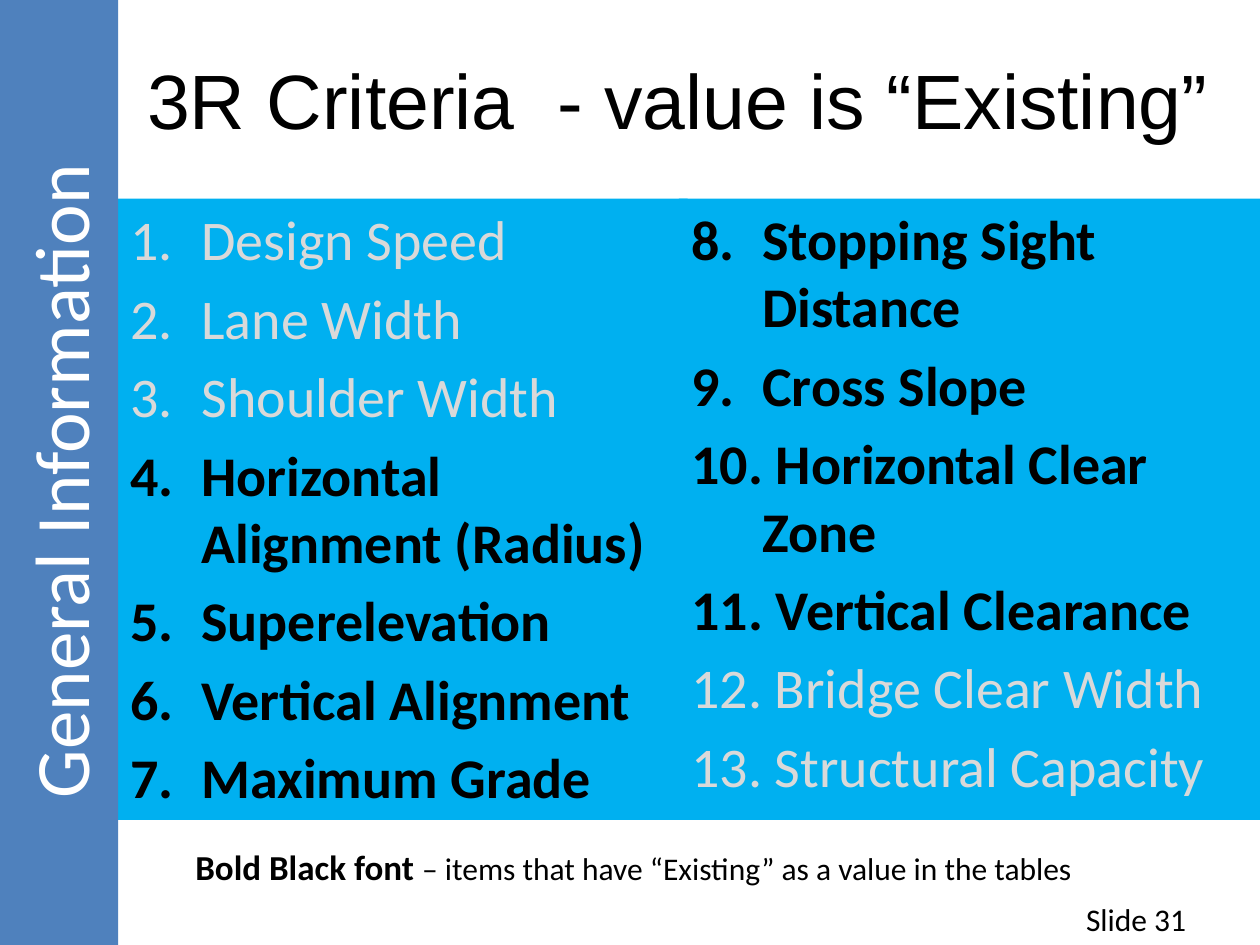
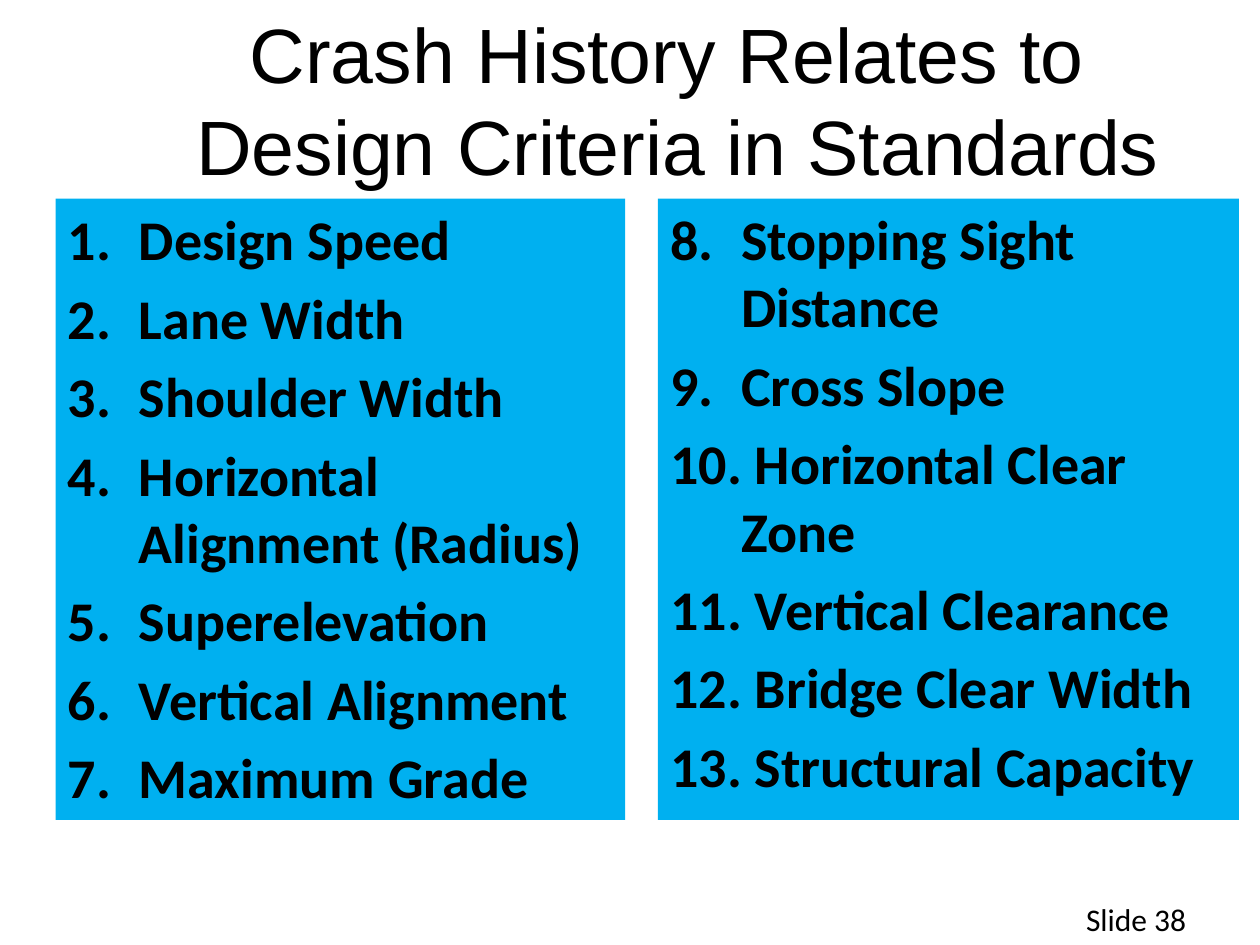
from dataclasses import dataclass

from lxml import etree
from pptx import Presentation
from pptx.dml.color import RGBColor
from pptx.enum.shapes import MSO_SHAPE
from pptx.enum.text import MSO_ANCHOR, PP_ALIGN
from pptx.oxml.ns import qn
from pptx.util import Pt

RECTANGLE = MSO_SHAPE.RECTANGLE
TOP, MIDDLE = MSO_ANCHOR.TOP, MSO_ANCHOR.MIDDLE
LEFT, CENTER = PP_ALIGN.LEFT, PP_ALIGN.CENTER


@dataclass(frozen=True)
class Theme:
    black: str = "000000"
    white: str = "FFFFFF"
    muted: str = "D9D9D9"
    panel: str = "00B0F0"
    band: str = "4F81BD"
    title_font: str = "Arial"
    body_font: str = "Calibri"
    title_size: int = 44
    list_size: int = 32
    note_size: int = 18
    note_lead_size: int = 20


theme = Theme()


def add_box(page, left, top, width, height, fill=None, anchor=TOP):
    """Add a text box, or a filled rectangle, and return it."""
    frame = Pt(left), Pt(top), Pt(width), Pt(height)
    if fill:
        box = page.shapes.add_shape(RECTANGLE, *frame)
        box.shadow.inherit = False
        box.fill.solid()
        box.fill.fore_color.rgb = RGBColor.from_string(fill)
        box.line.fill.background()
    else:
        box = page.shapes.add_textbox(*frame)
    box.text_frame.word_wrap = True
    box.text_frame.vertical_anchor = anchor
    return box


def add_text(para, text, size, font=theme.body_font, color=theme.black,
             bold=False, align=LEFT):
    """Add text to a paragraph; a newline becomes a line break."""
    para.alignment = align
    for index, line in enumerate(text.split("\n")):
        if index:
            para.add_line_break()
        span = para.add_run()
        span.text = line
        span.font.name = font
        span.font.size = Pt(size)
        span.font.bold = bold
        span.font.color.rgb = RGBColor.from_string(color)


# Content
criteria = [
    "Design Speed", "Lane Width", "Shoulder Width",
    "Horizontal Alignment (Radius)", "Superelevation",
    "Vertical Alignment", "Maximum Grade", "Stopping Sight Distance",
    "Cross Slope", "Horizontal Clear Zone", "Vertical Clearance",
    "Bridge Clear Width", "Structural Capacity",
]
all_numbers = range(1, len(criteria) + 1)
existing_numbers = range(4, 12)
columns = [(range(1, 8), 325.5), (range(8, 14), 332)]  # item numbers, width
list_indent = 40.5

# Title, slide number, left edges of the panels, numbers in bold black
slides = [
    ("3R Criteria  - value is “Existing”", 31, (67.5, 388), existing_numbers),
    ("Crash History Relates to \nDesign Criteria in Standards", 38,
     (31.75, 376), all_numbers),
]

deck = Presentation()
deck.slide_width, deck.slide_height = Pt(720), Pt(540)
pages = []

for title, slide_number, panel_lefts, bold_numbers in slides:
    page = deck.slides.add_slide(deck.slide_layouts[6])
    pages.append(page)

    # Title
    box = add_box(page, 67.5, 11.25, 640, 90, anchor=MIDDLE)
    add_text(box.text_frame.paragraphs[0], title, theme.title_size,
             font=theme.title_font, align=CENTER)

    # Numbered criteria in two panels
    for (numbers, width), left in zip(columns, panel_lefts):
        box = add_box(page, left, 113.5, width, 355, fill=theme.panel)
        for number in numbers:
            first = number == numbers[0]
            para = (box.text_frame.paragraphs[0] if first
                    else box.text_frame.add_paragraph())
            para.space_before = Pt(0.2 * theme.list_size)
            # Two-digit numbers fill the indent, so a space sets off the text
            text = criteria[number - 1]
            is_bold = number in bold_numbers
            add_text(para, " " + text if number >= 10 else text,
                     theme.list_size, bold=is_bold,
                     color=theme.black if is_bold else theme.muted)
            properties = para._p.get_or_add_pPr()
            properties.set("marL", str(Pt(list_indent)))
            properties.set("indent", str(-Pt(list_indent)))
            etree.SubElement(properties, qn("a:buFont"), typeface="+mj-lt")
            etree.SubElement(properties, qn("a:buAutoNum"),
                             type="arabicPeriod", startAt=str(numbers[0]))

    # Slide number
    box = add_box(page, 613.5, 511, 89.5, 29)
    add_text(box.text_frame.paragraphs[0], f"Slide {slide_number}",
             theme.note_size)

# Section band on the first slide
band = add_box(pages[0], 0, 0, 67.5, 540, fill=theme.band, anchor=MIDDLE)
band.text_frame._txBody.bodyPr.set("vert", "vert270")
add_text(band.text_frame.paragraphs[0], "General Information ",
         theme.title_size, color=theme.white, align=CENTER)

# Key to the bold items on the first slide
key = add_box(pages[0], 104.5, 479.5, 577.5, 31.5)
para = key.text_frame.paragraphs[0]
add_text(para, "Bold Black font ", theme.note_lead_size, bold=True)
add_text(para, "– items that have “Existing” as a value in the tables",
         theme.note_size)

deck.save("out.pptx")
